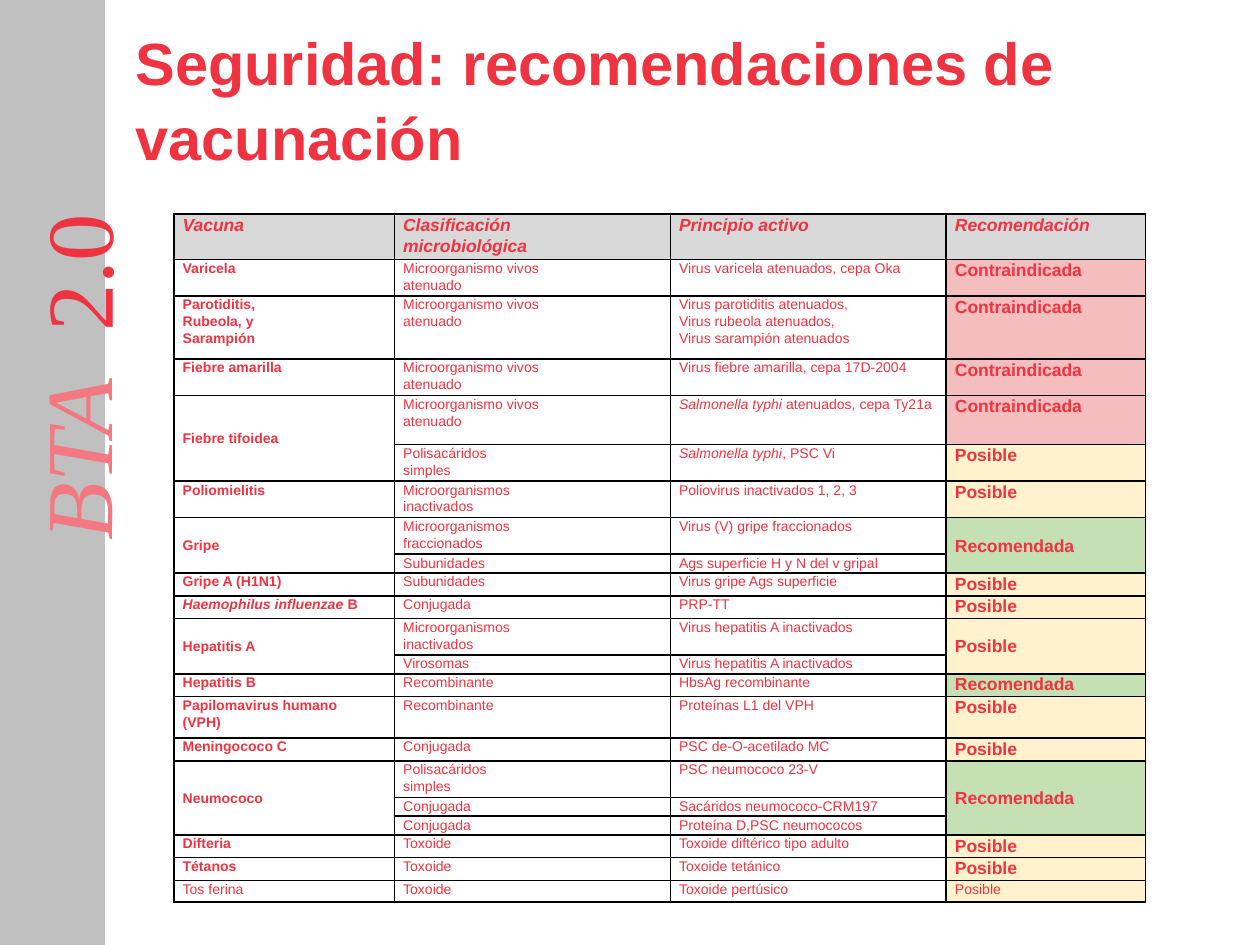
from lxml import etree
from pptx import Presentation
from pptx.dml.color import RGBColor
from pptx.enum.shapes import MSO_SHAPE
from pptx.enum.text import MSO_ANCHOR, PP_ALIGN
from pptx.oxml.ns import qn
from pptx.util import Inches, Pt

RECTANGLE = MSO_SHAPE.RECTANGLE
TOP, MIDDLE = MSO_ANCHOR.TOP, MSO_ANCHOR.MIDDLE
LEFT, JUSTIFY = PP_ALIGN.LEFT, PP_ALIGN.JUSTIFY

RED = RGBColor(0xEF, 0x33, 0x40)
PALE_RED = RGBColor(0xF4, 0x78, 0x81)
SILVER = RGBColor(0xC0, 0xC0, 0xC0)
HEADER_GREY = RGBColor(0xD9, 0xD9, 0xD9)
WHITE = RGBColor(0xFF, 0xFF, 0xFF)
ADVICE_FILLS = {
    "Contraindicada": RGBColor(0xF4, 0xBE, 0xBF),
    "Posible": RGBColor(0xFF, 0xF2, 0xCC),
    "Recomendada": RGBColor(0xC5, 0xE0, 0xB3),
}

TITLE = "Seguridad: recomendaciones de vacunación"
HEADINGS = ("Vacuna", "Clasificación\nmicrobiológica", "Principio activo", "Recomendación")
LIVE = "Microorganismo vivos\natenuado"
INACTIVATED = "Microorganismos\ninactivados"
SIMPLE = "Polisacáridos\nsimples"
VACCINES = [
    (0.29, "Varicela", LIVE, "Virus varicela atenuados, cepa Oka", "Contraindicada"),
    (0.5, "Parotiditis,\nRubeola, y\nSarampión", LIVE,
     "Virus parotiditis atenuados,\nVirus rubeola atenuados,\nVirus sarampión atenuados", "Contraindicada"),
    (0.29, "Fiebre amarilla", LIVE, "Virus fiebre amarilla, cepa 17D-2004", "Contraindicada"),
    (0.39, "Fiebre tifoidea", LIVE, "*Salmonella typhi* atenuados, cepa Ty21a", "Contraindicada"),
    (0.29, None, SIMPLE, "*Salmonella typhi*, PSC Vi", "Posible"),
    (0.29, "Poliomielitis", INACTIVATED, "Poliovirus inactivados 1, 2, 3", "Posible"),
    (0.29, "Gripe", "Microorganismos\nfraccionados", "Virus (V) gripe fraccionados", "Recomendada"),
    (0.15, None, "Subunidades", "Ags superficie H y N del v gripal", None),
    (0.18, "Gripe A (H1N1)", "Subunidades", "Virus gripe Ags superficie", "Posible"),
    (0.18, "*Haemophilus influenzae* B", "Conjugada", "PRP-TT", "Posible"),
    (0.29, "Hepatitis A", INACTIVATED, "Virus hepatitis A inactivados", "Posible"),
    (0.15, None, "Virosomas", "Virus hepatitis A inactivados", None),
    (0.18, "Hepatitis B", "Recombinante", "HbsAg recombinante", "Recomendada"),
    (0.33, "Papilomavirus humano\n(VPH)", "Recombinante", "Proteínas L1 del VPH", "Posible"),
    (0.18, "Meningococo C", "Conjugada", "PSC de-O-acetilado MC", "Posible"),
    (0.29, "Neumococo", SIMPLE, "PSC neumococo 23-V", "Recomendada"),
    (0.15, None, "Conjugada", "Sacáridos neumococo-CRM197", None),
    (0.15, None, "Conjugada", "Proteína D,PSC neumococos", None),
    (0.18, "Difteria", "Toxoide", "Toxoide diftérico tipo adulto", "Posible"),
    (0.18, "Tétanos", "Toxoide", "Toxoide tetánico", "Posible"),
    (0.17, "Tos ferina", "Toxoide", "Toxoide pertúsico", "Posible"),
]
HEADER_HEIGHT = 0.36
COLUMN_WIDTHS = (1.75, 2.19, 2.19, 1.58)
NAME, ADVICE = 0, 3


def write(frame, text, size=8, font="Arial", color=RED, bold=False, italic=False,
          align=LEFT, spacing=1.0, after=0):
    for index, line in enumerate(text.split("\n")):
        paragraph = frame.paragraphs[0] if index == 0 else frame.add_paragraph()
        paragraph.alignment = align
        paragraph.line_spacing = spacing
        paragraph.space_after = Pt(after)
        for part, words in enumerate(line.split("*")):
            if words:
                run = paragraph.add_run()
                run.text = words
                run.font.size = Pt(size)
                run.font.name = font
                run.font.color.rgb = color
                run.font.bold = bold
                run.font.italic = italic or part % 2 == 1


def style_cell(cell, fill):
    cell.margin_left = cell.margin_right = Inches(0.07)
    cell.margin_top = cell.margin_bottom = 0
    properties = cell._tc.get_or_add_tcPr()
    for edge in ("a:lnL", "a:lnR", "a:lnT", "a:lnB"):
        border = etree.SubElement(properties, qn(edge), w=str(Pt(1)))
        solid = etree.SubElement(border, qn("a:solidFill"))
        etree.SubElement(solid, qn("a:srgbClr"), val="000000")
    cell.fill.solid()
    cell.fill.fore_color.rgb = fill


def write_cell(cell, text, **fmt):
    write(cell.text_frame, text, align=JUSTIFY, spacing=1.07,
          after=0 if "\n" in text else 8, **fmt)


def add_sidebar(slide):
    band = slide.shapes.add_shape(RECTANGLE, 0, 0, Inches(0.83), Inches(7.5))
    band.shadow.inherit = False
    band.fill.solid()
    band.fill.fore_color.rgb = SILVER
    band.line.color.rgb = SILVER
    band.line.width = Pt(0.75)

    label = slide.shapes.add_textbox(Inches(-1.11), Inches(2.27), Inches(3.23), Inches(1))
    label.rotation = 270
    frame = label.text_frame
    frame.word_wrap = True
    frame.margin_top = Inches(0.14)
    frame.margin_bottom = 0
    write(frame, "BTA", size=54, font="Times New Roman", color=PALE_RED, italic=True)
    write(frame, " ", size=54, font="Times New Roman")
    frame.paragraphs[0].runs[-1].font._element.set("spc", "1350")
    write(frame, "2.0", size=54, font="Times New Roman")


def add_title(slide):
    title = slide.shapes.add_textbox(Inches(0.98), Inches(0.13), Inches(8.44), Inches(0.77))
    title.text_frame.word_wrap = True
    write(title.text_frame, TITLE, size=34, bold=True, spacing=1.05)


def add_vaccine_table(slide):
    heights = [HEADER_HEIGHT] + [row[0] for row in VACCINES]
    table = slide.shapes.add_table(
        len(heights), len(COLUMN_WIDTHS), Inches(1.38), Inches(1.7),
        Inches(sum(COLUMN_WIDTHS)), Inches(sum(heights))).table
    table.first_row = table.horz_banding = False
    for column, width in zip(table.columns, COLUMN_WIDTHS):
        column.width = Inches(width)
    for row, height in zip(table.rows, heights):
        row.height = Inches(height)

    for column, heading in enumerate(HEADINGS):
        cell = table.cell(0, column)
        style_cell(cell, HEADER_GREY)
        write_cell(cell, heading, size=10, bold=True, italic=True)

    last = len(VACCINES)
    for column in range(len(COLUMN_WIDTHS)):
        texts = [row[column + 1] for row in VACCINES]
        starts = [i for i, text in enumerate(texts, 1) if text is not None]
        for start, end in zip(starts, starts[1:] + [last + 1]):
            text = texts[start - 1]
            fill = ADVICE_FILLS[text] if column == ADVICE else WHITE
            for row in range(start, end):
                style_cell(table.cell(row, column), fill)
            cell = table.cell(start, column)
            if end - start > 1:
                cell.merge(table.cell(end - 1, column))
            cell.vertical_anchor = MIDDLE if end - start > 1 else TOP
            strong = column in (NAME, ADVICE) and start != last
            write_cell(cell, text, bold=strong, size=10 if strong and column == ADVICE else 8)


def main():
    presentation = Presentation()
    presentation.slide_width = Inches(10)
    presentation.slide_height = Inches(7.5)
    slide = presentation.slides.add_slide(presentation.slide_layouts[6])
    add_sidebar(slide)
    add_title(slide)
    add_vaccine_table(slide)
    presentation.save("out.pptx")


if __name__ == "__main__":
    main()
